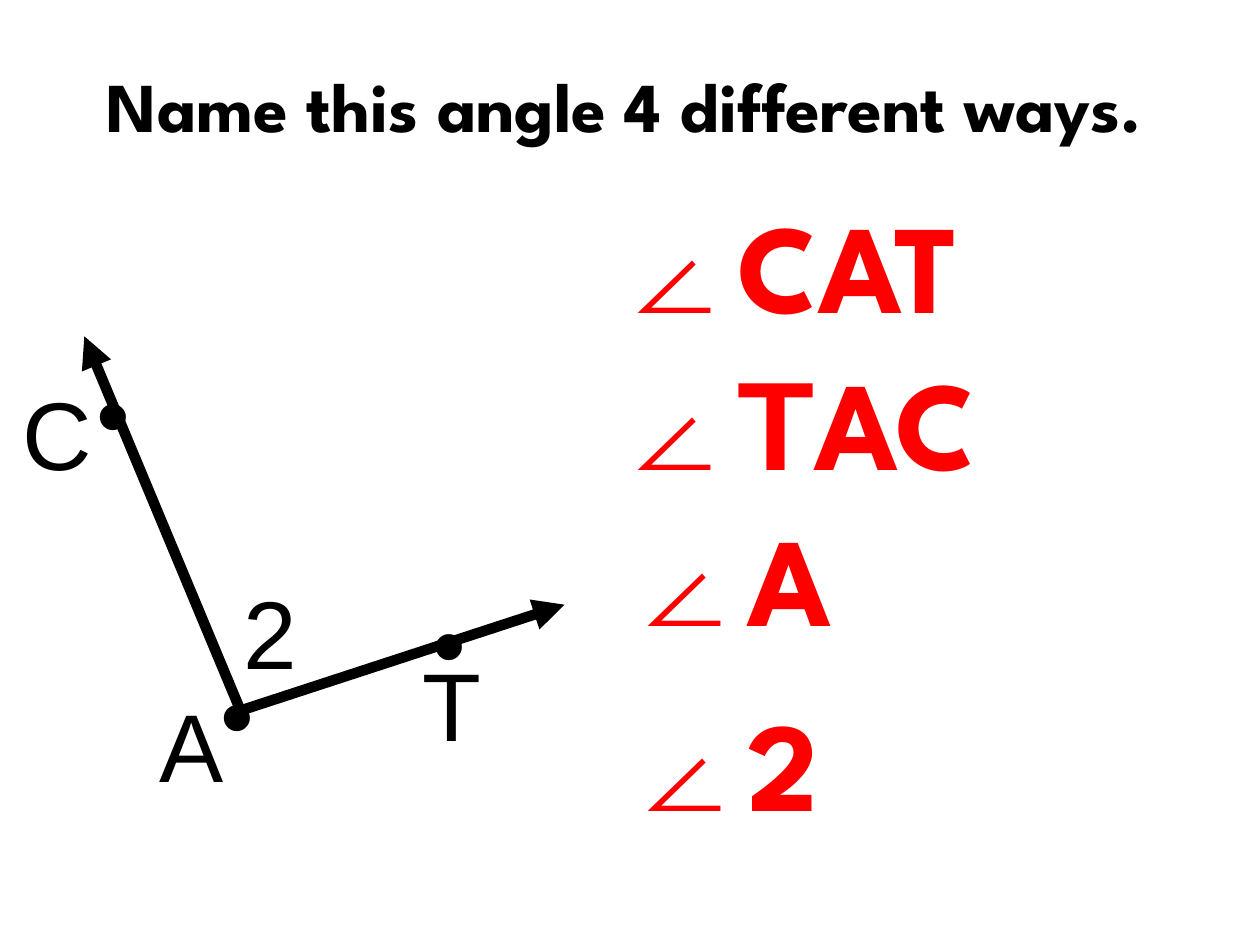
from pptx import Presentation
from pptx.dml.color import RGBColor
from pptx.enum.shapes import MSO_CONNECTOR
from pptx.enum.text import MSO_ANCHOR, PP_ALIGN
from pptx.oxml.ns import qn
from pptx.util import Cm, Pt
from lxml.etree import SubElement

BLACK, RED = "000000", "FF0000"
SANS, DISPLAY = "Arial", "League Spartan"


def style(r, font, size, color, bold=False):
    r.font.name = font
    r.font.size = Pt(size)
    r.font.bold = bold
    r.font.color.rgb = RGBColor.from_string(color)


def add_text(s, x, y, w, h, parts, size, color):
    tf = s.shapes.add_textbox(Cm(x), Cm(y), Cm(w), Cm(h)).text_frame
    tf.word_wrap = True
    for text, font, bold in parts:
        r = tf.paragraphs[0].add_run()
        r.text = text
        style(r, font, size, color, bold)


prs = Presentation()
prs.slide_width, prs.slide_height = Cm(25.4), Cm(19.05)
s = prs.slides.add_slide(prs.slide_layouts[5])

# Title
title = s.shapes.title
title.left, title.top, title.width, title.height = Cm(0.84), Cm(0.2), Cm(23.5), Cm(3.81)
tf = title.text_frame
tf.text = "Name this angle 4 different ways."
tf.vertical_anchor = MSO_ANCHOR.MIDDLE
tf.paragraphs[0].alignment = PP_ALIGN.CENTER
style(tf.paragraphs[0].runs[0], DISPLAY, 40, BLACK, True)

# Rays of the angle
for x1, y1, x2, y2 in [(4.88, 14.4, 1.7, 6.78), (4.83, 14.33, 11.38, 12.19)]:
    ray = s.shapes.add_connector(MSO_CONNECTOR.STRAIGHT, Cm(x1), Cm(y1), Cm(x2), Cm(y2))
    ray.line.width = Pt(6)
    ray.line.color.rgb = RGBColor.from_string(BLACK)
    SubElement(ray.line._get_or_add_ln(), qn("a:tailEnd"), type="triangle")
    SubElement(ray._element.spPr, qn("a:effectLst"))

# Points and their labels
for text, x, y, w in [
    ("•", 1.7, 6.99, 2.97),
    ("•", 4.19, 13.06, 1.27),
    ("•", 8.46, 11.63, 1.27),
    ("A", 2.97, 13.72, 2.11),
    ("T", 8.26, 12.88, 1.91),
    ("C", 0.2, 7.42, 1.91),
    ("2", 4.65, 11.43, 1.91),
]:
    add_text(s, x, y, w, 2.59, [(text, SANS, False)], 55, BLACK)

# Four names of the angle
for x, y, parts in [
    (12.07, 3.66, [("∠", SANS, False), ("CAT", DISPLAY, True)]),
    (12.07, 6.83, [("∠T", SANS, True), ("AC", DISPLAY, True)]),
    (12.27, 9.96, [("∠", SANS, False), ("A", DISPLAY, True)]),
    (12.27, 13.69, [("∠", SANS, False), ("2", DISPLAY, True)]),
]:
    add_text(s, x, y, 9.32, 3.33, parts, 72, RED)

prs.save("out.pptx")
